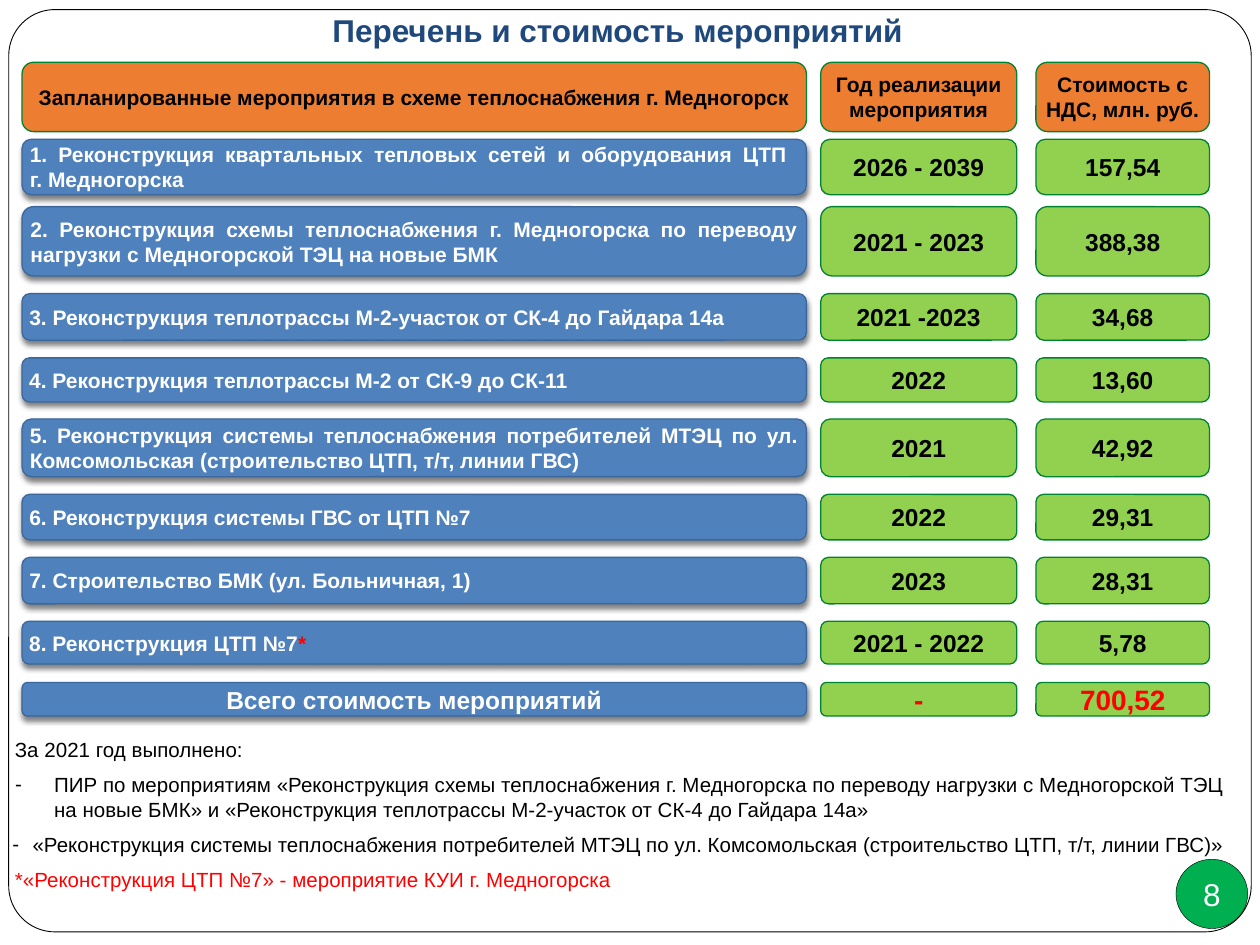
from lxml import etree
from pptx import Presentation
from pptx.dml.color import RGBColor
from pptx.enum import shapes, text
from pptx.oxml import ns
from pptx.util import Pt

COLORS = {
    "white": "FFFFFF", "black": "000000", "red": "FF0000", "title": "1F497D",
    "blue": "4F81BD", "blue_edge": "3B679C", "orange": "ED7D31",
    "green": "92D050", "green_edge": "008330", "badge": "00B050",
}
ROUNDED = shapes.MSO_SHAPE.ROUNDED_RECTANGLE
OVAL = shapes.MSO_SHAPE.OVAL
CENTER = text.PP_ALIGN.CENTER
JUSTIFY = text.PP_ALIGN.JUSTIFY

prs = Presentation()
prs.slide_width, prs.slide_height = Pt(720), Pt(540)
slide = prs.slides.add_slide(prs.slide_layouts[6])


def style(run, size, color, bold=True):
    run.font.name = "Arial"
    run.font.size = Pt(size)
    run.font.bold = bold
    run.font.color.rgb = RGBColor.from_string(COLORS[color])


def add_box(kind, place, fill, edge, edge_width, words="", size=12, color="black",
            align=CENTER, bold=True, insets=(7.2, 3.6)):
    box = slide.shapes.add_shape(kind, *[Pt(length) for length in place])
    box.shadow.inherit = False
    box.fill.solid()
    box.fill.fore_color.rgb = RGBColor.from_string(COLORS[fill])
    box.line.color.rgb = RGBColor.from_string(COLORS[edge])
    box.line.width = Pt(edge_width)
    frame = box.text_frame
    frame.vertical_anchor = text.MSO_ANCHOR.MIDDLE
    frame.margin_left = frame.margin_right = Pt(insets[0])
    frame.margin_top = frame.margin_bottom = Pt(insets[1])
    frame.text = words
    frame.paragraphs[0].alignment = align
    for run in frame.paragraphs[0].runs:
        style(run, size, color, bold)
    return box


border = add_box(ROUNDED, (5, 5.5, 710, 527), "white", "black", 0.5)
border.adjustments[0] = 0.05

title = slide.shapes.add_textbox(Pt(-7), Pt(3), Pt(720), Pt(29)).text_frame
title.word_wrap = True
title.text = "Перечень и стоимость мероприятий"
title.paragraphs[0].alignment = CENTER
style(title.paragraphs[0].runs[0], 18, "title")

columns = [(12.6, 448.2), (469, 112), (592, 99.2)]
headings = [
    "Запланированные мероприятия в схеме теплоснабжения г. Медногорск",
    "Год реализации мероприятия",
    "Стоимость с НДС, млн. руб.",
]
for (left, width), heading in zip(columns, headings):
    add_box(ROUNDED, (left, 35.6, width, 39.6), "orange", "green_edge", 0.75,
            heading, insets=(2.9, 2.9))

measures = [
    (79.6, 31.7, "1. Реконструкция квартальных тепловых сетей и оборудования ЦТП \vг. Медногорска",
     "2026 - 2039", "157,54"),
    (118.1, 39.6, "2. Реконструкция схемы теплоснабжения г. Медногорска по переводу нагрузки "
     "с Медногорской ТЭЦ на новые БМК", "2021 - 2023", "388,38"),
    (167.8, 26.6, "3. Реконструкция теплотрассы М-2-участок от СК-4 до Гайдара 14а",
     "2021 -2023", "34,68"),
    (204.5, 25.2, "4. Реконструкция теплотрассы М-2 от СК-9 до СК-11", "2022", "13,60"),
    (239.4, 33, "5. Реконструкция системы теплоснабжения потребителей МТЭЦ по ул. "
     "Комсомольская (строительство ЦТП, т/т, линии ГВС)", "2021", "42,92"),
    (282.5, 26, "6. Реконструкция системы ГВС от ЦТП №7", "2022", "29,31"),
    (318.5, 26.6, "7. Строительство БМК (ул. Больничная, 1)", "2023", "28,31"),
    (355, 24.5, "8. Реконструкция ЦТП №7", "2021 - 2022", "5,78"),
    (390, 19.2, "Всего стоимость мероприятий", "-", "700,52"),
]
for top, height, measure, years, cost in measures:
    total = measure.startswith("Всего")
    left, width = columns[0]
    bar = add_box(ROUNDED, (left, top, width, height), "blue", "blue_edge", 0.75, measure,
                  14 if total else 12, "white", CENTER if total else JUSTIFY,
                  insets=(2.9, 3.6))
    effects = bar._element.spPr.find(ns.qn("a:effectLst"))
    shade = etree.SubElement(effects, ns.qn("a:outerShdw"), blurRad=str(Pt(3)),
                             dist=str(Pt(2)), dir="5400000", rotWithShape="0")
    tint = etree.SubElement(shade, ns.qn("a:srgbClr"), val=COLORS["black"])
    etree.SubElement(tint, ns.qn("a:alpha"), val="50000")
    if measure.startswith("8."):
        asterisk = bar.text_frame.paragraphs[0].add_run()
        asterisk.text = "*"
        style(asterisk, 12, "red")
    for (left, width), value in zip(columns[1:], (years, cost)):
        add_box(ROUNDED, (left, top, width, height), "green", "green_edge", 0.75, value,
                16 if total else 14, "red" if total else "black")

add_box(OVAL, (672, 491, 41, 39.6), "badge", "black", 0.25, "8", 18, "white",
        bold=False, insets=(0, 0)).text_frame.word_wrap = False

notes = [
    ("За 2021 год выполнено:", 1.4, 0, "black"),
    ("ПИР по мероприятиям «Реконструкция схемы теплоснабжения г. Медногорска по переводу "
     "нагрузки с Медногорской ТЭЦ \vна новые БМК» и «Реконструкция теплотрассы "
     "М-2-участок от СК-4 до Гайдара 14а»", 23.8, -22.3, "black"),
    ("«Реконструкция системы теплоснабжения потребителей МТЭЦ по ул. Комсомольская "
     "(строительство ЦТП, т/т, линии ГВС)»", 11.5, -11.5, "black"),
    ("*«Реконструкция ЦТП №7» - мероприятие КУИ г. Медногорска", 1.4, 0, "red"),
]
progress = slide.shapes.add_textbox(Pt(0), Pt(417.6), Pt(728.6), Pt(98)).text_frame
progress.word_wrap = True
progress.text = "\n".join(note[0] for note in notes)
for paragraph, (_, margin, indent, color) in zip(progress.paragraphs, notes):
    paragraph.space_after = Pt(6)
    for run in paragraph.runs:
        style(run, 11.7, color, False)
    properties = paragraph._p.get_or_add_pPr()
    properties.set("marL", str(Pt(margin)))
    properties.set("indent", str(Pt(indent)))
    if indent:
        etree.SubElement(properties, ns.qn("a:buFont"), typeface="Arial")
        etree.SubElement(properties, ns.qn("a:buChar"), char="-")

prs.save("out.pptx")
